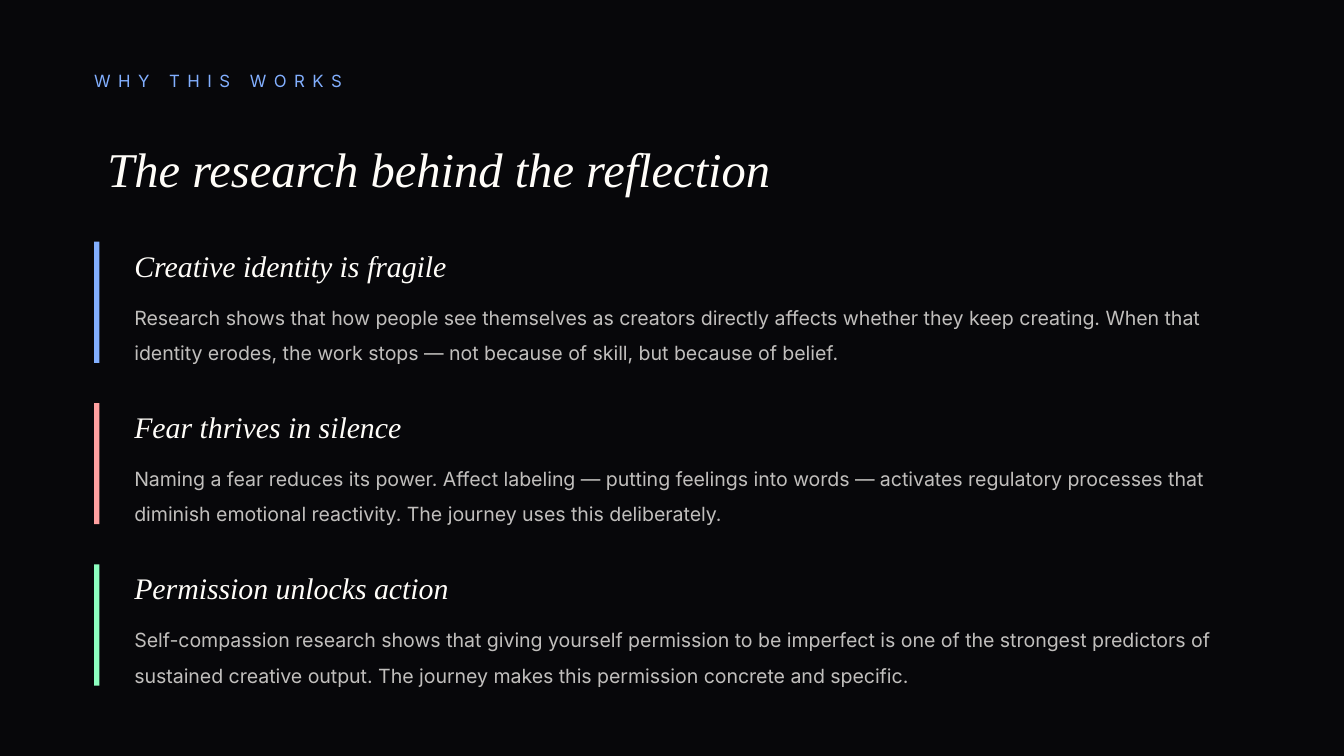
from pptx import Presentation
from pptx.dml.color import RGBColor
from pptx.enum.shapes import MSO_SHAPE
from pptx.enum.text import MSO_ANCHOR
from pptx.util import Cm, Pt

BACKGROUND = RGBColor(0x07, 0x07, 0x0A)
BLUE = RGBColor(0x82, 0xAF, 0xFF)
CORAL = RGBColor(0xFF, 0xA0, 0xA0)
MINT = RGBColor(0x8D, 0xFF, 0xC0)
CREAM = RGBColor(0xFF, 0xFD, 0xF9)
GREY = RGBColor(0xC1, 0xBF, 0xBD)

SANS = "Inter"
SERIF = "Times New Roman"

LEFT = 1.78
FIRST_TOP = 4.57
PITCH = 3.05
HEADING_HEIGHT = 0.89

FINDINGS = [
    (BLUE, "Creative identity is fragile",
     "Research shows that how people see themselves as creators directly affects "
     "whether they keep creating. When that identity erodes, the work stops — not "
     "because of skill, but because of belief."),
    (CORAL, "Fear thrives in silence",
     "Naming a fear reduces its power. Affect labeling — putting feelings into words — "
     "activates regulatory processes that diminish emotional reactivity. The journey "
     "uses this deliberately."),
    (MINT, "Permission unlocks action",
     "Self-compassion research shows that giving yourself permission to be imperfect "
     "is one of the strongest predictors of sustained creative output. The journey "
     "makes this permission concrete and specific."),
]


def add_text(slide, text, left, top, width, height, font, size, color,
             italic=False, inset=0, line_spacing=None):
    sp = slide.shapes.add_textbox(Cm(left), Cm(top), Cm(width), Cm(height))
    tf = sp.text_frame
    tf.word_wrap = True
    tf.vertical_anchor = MSO_ANCHOR.MIDDLE
    tf.margin_left = tf.margin_right = Cm(inset)
    tf.margin_top = tf.margin_bottom = Cm(inset / 2)
    p = tf.paragraphs[0]
    p.text = text
    if line_spacing:
        p.line_spacing = line_spacing
    r = p.runs[0]
    r.font.name = font
    r.font.size = Pt(size)
    r.font.italic = italic
    r.font.color.rgb = color
    return r


def add_bar(slide, top, color):
    sp = slide.shapes.add_shape(MSO_SHAPE.RECTANGLE, Cm(LEFT), Cm(top), Cm(0.1), Cm(2.29))
    sp.shadow.inherit = False
    sp.fill.solid()
    sp.fill.fore_color.rgb = color
    sp.line.fill.background()


def add_finding(slide, top, color, heading, body):
    add_bar(slide, top, color)
    add_text(slide, heading, 2.54, top, 20.32, HEADING_HEIGHT, SERIF, 16, CREAM, italic=True)
    add_text(slide, body, 2.54, top + HEADING_HEIGHT, 21.08, 1.52, SANS, 10.5, GREY,
             line_spacing=1.5)


def main():
    prs = Presentation()
    prs.slide_width = Cm(25.4)
    prs.slide_height = Cm(14.29)
    slide = prs.slides.add_slide(prs.slide_layouts[6])
    slide.background.fill.solid()
    slide.background.fill.fore_color.rgb = BACKGROUND

    eyebrow = add_text(slide, "WHY THIS WORKS", LEFT, 1.02, 10.16, 1.02, SANS, 9, BLUE)
    eyebrow.font._element.set("spc", "400")
    add_text(slide, "The research behind the reflection", LEFT, 2.29, 20.32, 1.78,
             SERIF, 26, CREAM, italic=True, inset=0.25)

    for i, finding in enumerate(FINDINGS):
        add_finding(slide, FIRST_TOP + i * PITCH, *finding)

    prs.save("out.pptx")


if __name__ == "__main__":
    main()
